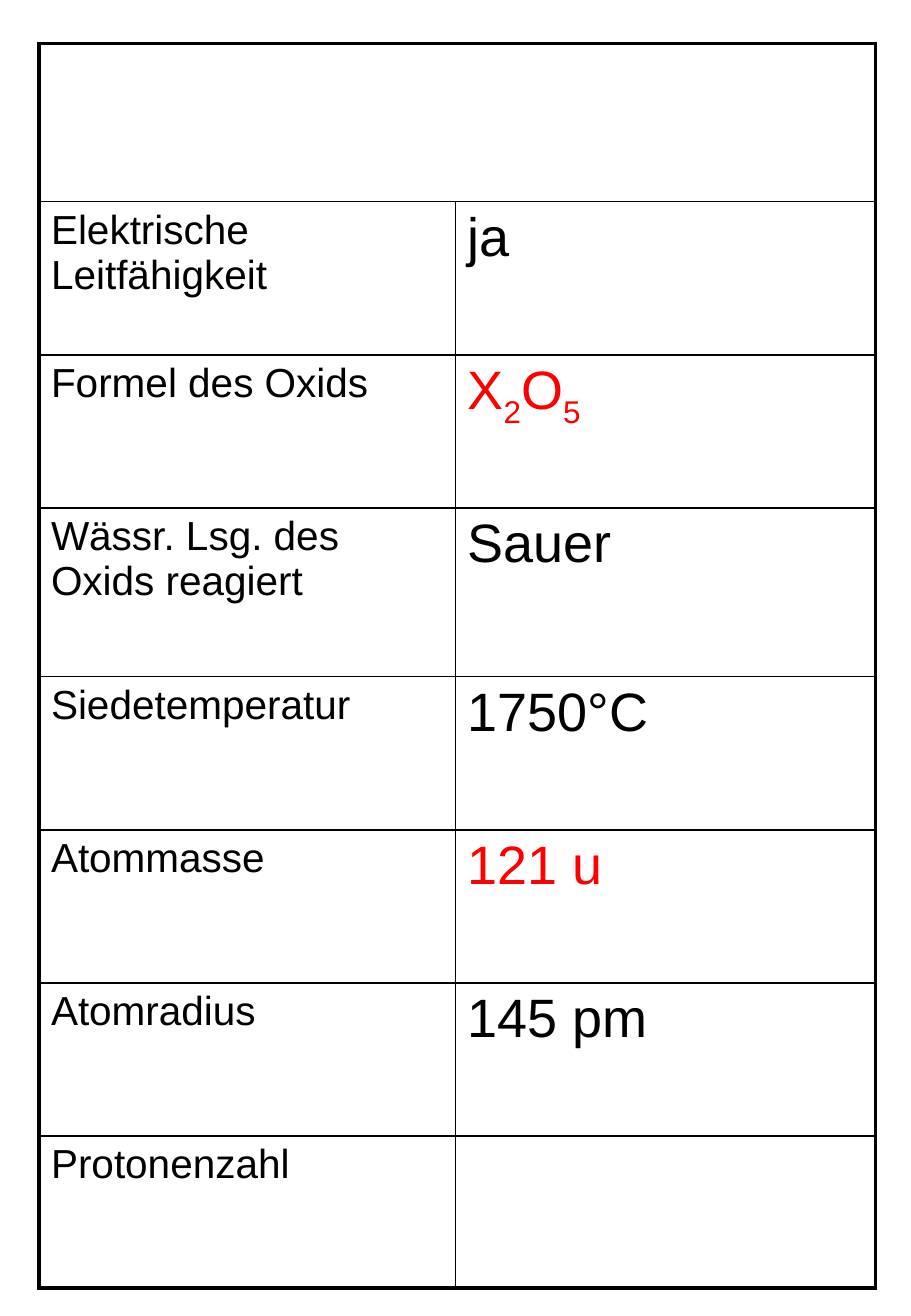
from lxml import etree
from pptx import Presentation
from pptx.dml.color import RGBColor
from pptx.oxml.ns import qn
from pptx.util import Inches, Pt

COLORS = {"black": "000000", "red": "FF0000"}
FONT = "Arial"
THICK, THIN = 2.25, 1
COLUMN_WIDTHS = [3.43, 3.46]
ROW_HEIGHTS = [1.3, 1.26, 1.26, 1.39, 1.26, 1.26, 1.26, 1.25]

# Label, value and value colour; digits after "_" are subscripts
PROPERTIES = [
    ("Elektrische Leitfähigkeit", ["ja"], "black"),
    ("Formel des Oxids", ["X", "_2", "O", "_5"], "red"),
    ("Wässr. Lsg. des Oxids reagiert", ["Sauer"], "black"),
    ("Siedetemperatur", ["1750°C"], "black"),
    ("Atommasse", ["121 u"], "red"),
    ("Atomradius", ["145 pm"], "black"),
    ("Protonenzahl", [], "black"),
]


def write_cell(cell, pieces, size, color):
    paragraph = cell.text_frame.paragraphs[0]
    for piece in pieces:
        run = paragraph.add_run()
        run.text = piece.lstrip("_")
        run.font.name = FONT
        run.font.size = Pt(size)
        run.font.color.rgb = RGBColor.from_string(COLORS[color])
        if piece.startswith("_"):
            run._r.get_or_add_rPr().set("baseline", "-25000")


def add_borders(cell, widths):
    properties = cell._tc.get_or_add_tcPr()
    for index, (side, width) in enumerate(widths.items()):
        line = etree.Element(qn(f"a:ln{side}"), w=str(int(Pt(width))))
        fill = etree.SubElement(line, qn("a:solidFill"))
        etree.SubElement(fill, qn("a:srgbClr"), val=COLORS["black"])
        properties.insert(index, line)


presentation = Presentation()
presentation.slide_width = Inches(7.5)
presentation.slide_height = Inches(10.83)
slide = presentation.slides.add_slide(presentation.slide_layouts[6])

# Table grid
row_count, column_count = len(ROW_HEIGHTS), len(COLUMN_WIDTHS)
table = slide.shapes.add_table(
    row_count, column_count, Inches(0.32), Inches(0.36),
    Inches(sum(COLUMN_WIDTHS)), Inches(sum(ROW_HEIGHTS))).table
table.first_row = False
table.horz_banding = False
for column, width in zip(table.columns, COLUMN_WIDTHS):
    column.width = Inches(width)
for row, height in zip(table.rows, ROW_HEIGHTS):
    row.height = Inches(height)

# Thick outer frame, thin inner lines
last_row, last_column = row_count - 1, column_count - 1
for r in range(row_count):
    for c in range(column_count):
        cell = table.cell(r, c)
        cell.fill.background()
        add_borders(cell, {
            "L": THICK if c == 0 else THIN,
            "R": THICK if c == last_column or r == 0 else THIN,
            "T": THICK if r == 0 else THIN,
            "B": THICK if r == last_row else THIN,
        })

# Empty header across both columns
table.cell(0, 0).merge(table.cell(0, last_column))

# Property rows
for r, (label, value, color) in enumerate(PROPERTIES, start=1):
    write_cell(table.cell(r, 0), [label], 24, "black")
    write_cell(table.cell(r, 1), value, 32, color)

presentation.save("out.pptx")
